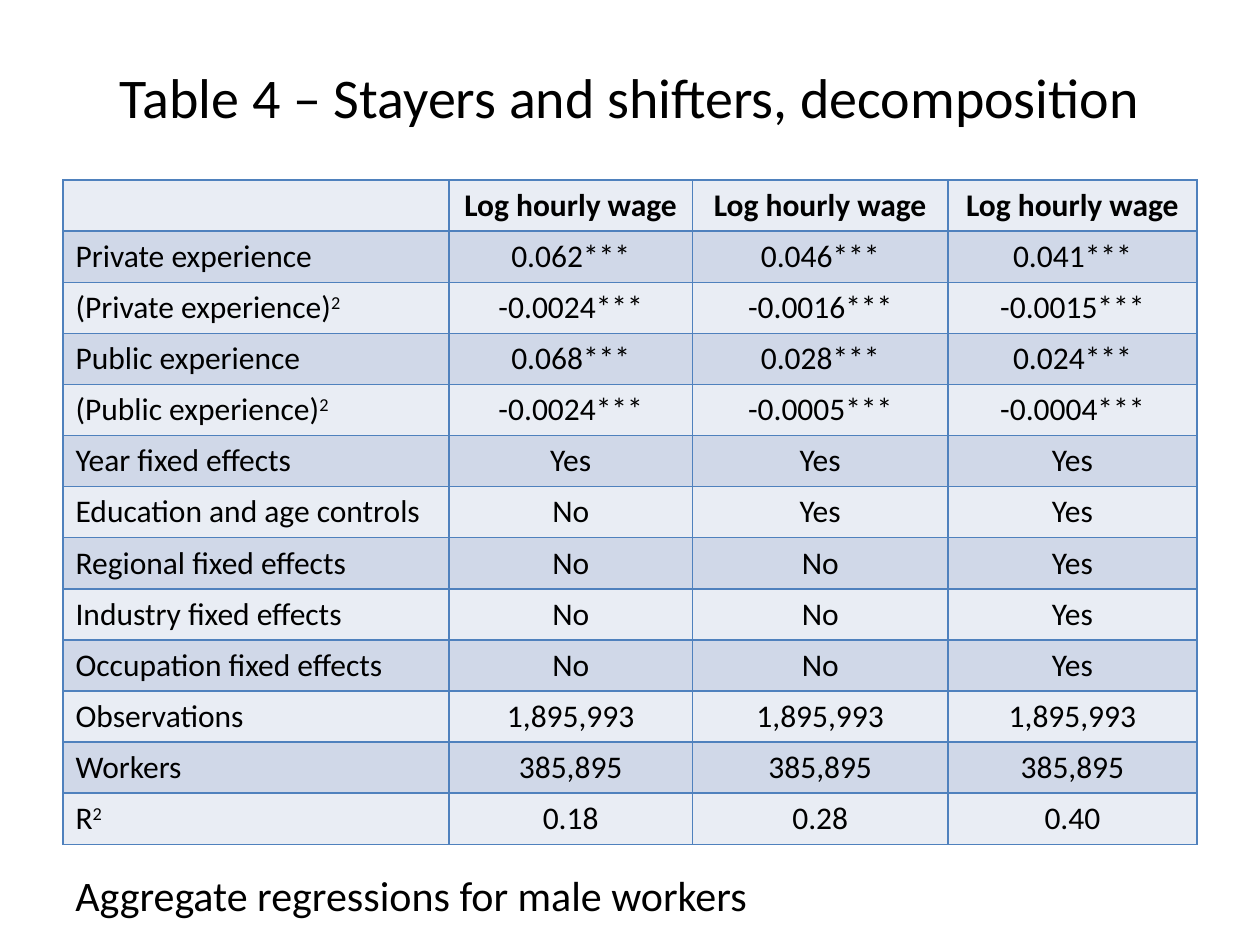
"""Build a slide with a table of wage regressions for stayers and shifters."""
from lxml import etree
from pptx import Presentation
from pptx import util as u
from pptx.dml.color import RGBColor
from pptx.enum import text as t
from pptx.oxml import ns

BLACK = RGBColor(0x00, 0x00, 0x00)
BLUE = RGBColor(0x4F, 0x81, 0xBD)
PALE = RGBColor(0xE9, 0xED, 0xF4)
BAND = RGBColor(0xD0, 0xD8, 0xE8)

WIDTHS = [7.78, 4.91, 5.15, 5.02]
ROWS = [
    [""] + ["Log hourly wage"] * 3,
    ["Private experience", "0.062***", "0.046***", "0.041***"],
    ["(Private experience)^2", "-0.0024***", "-0.0016***", "-0.0015***"],
    ["Public experience", "0.068***", "0.028***", "0.024***"],
    ["(Public experience)^2", "-0.0024***", "-0.0005***", "-0.0004***"],
    ["Year fixed effects", "Yes", "Yes", "Yes"],
    ["Education and age controls", "No", "Yes", "Yes"],
    ["Regional fixed effects", "No", "No", "Yes"],
    ["Industry fixed effects", "No", "No", "Yes"],
    ["Occupation fixed effects", "No", "No", "Yes"],
    ["Observations"] + ["1,895,993"] * 3,
    ["Workers"] + ["385,895"] * 3,
    ["R^2", "0.18", "0.28", "0.40"],
]


class Deck:
    """Holds the text style and the current slide."""

    def __init__(self, font, color):
        self.font, self.color = font, color
        self.prs = Presentation()
        self.prs.slide_width, self.prs.slide_height = u.Cm(25.4), u.Cm(19.05)
        self.slide = self.prs.slides.add_slide(self.prs.slide_layouts[5])

    def label(self, frame, words, size, bold=False, align=t.PP_ALIGN.LEFT):
        """Fill a frame; what follows a caret is raised."""
        para = frame.paragraphs[0]
        para.alignment = align
        para.font.size = u.Pt(size)
        base, _, power = words.partition("^")
        for part in filter(None, (base, power)):
            run = para.add_run()
            run.text = part
            run.font.name, run.font.size = self.font, u.Pt(size)
            run.font.bold, run.font.color.rgb = bold, self.color
        if power:
            run.font._element.set("baseline", "30000")

    def title(self, words, box, size):
        """Place and fill the title placeholder."""
        shape = self.slide.shapes.title
        shape.left, shape.top, shape.width, shape.height = map(u.Cm, box)
        shape.text_frame.vertical_anchor = t.MSO_ANCHOR.MIDDLE
        self.label(shape.text_frame, words, size, align=t.PP_ALIGN.CENTER)

    def note(self, words, box, size):
        """Add a wrapped text box."""
        frame = self.slide.shapes.add_textbox(*map(u.Cm, box)).text_frame
        frame.word_wrap = True
        self.label(frame, words, size)

    def border(self, cell, color):
        """Draw a thin line on all four sides of a cell."""
        props = cell._tc.get_or_add_tcPr()
        for side in "LRTB":
            line = etree.SubElement(props, ns.qn(f"a:ln{side}"), w=str(u.Pt(1)))
            fill = etree.SubElement(line, ns.qn("a:solidFill"))
            etree.SubElement(fill, ns.qn("a:srgbClr"), val=str(color))

    def table(self, rows, widths, left, top, step, size):
        """Add a banded table with a bold first row."""
        box = map(u.Cm, (left, top, sum(widths), step * len(rows)))
        grid = self.slide.shapes.add_table(len(rows), len(widths), *box).table
        for col, width in zip(grid.columns, widths):
            col.width = u.Cm(width)
        for i, row in enumerate(rows):
            grid.rows[i].height = u.Cm(step)
            for j, words in enumerate(row):
                cell = grid.cell(i, j)
                self.border(cell, BLUE)
                cell.fill.solid()
                cell.fill.fore_color.rgb = BAND if i % 2 else PALE
                align = t.PP_ALIGN.CENTER if j else t.PP_ALIGN.LEFT
                self.label(cell.text_frame, words, size, i == 0, align)


def main():
    """Build and save the slide."""
    deck = Deck("Calibri", BLACK)
    deck.title("Table 4 – Stayers and shifters, decomposition",
               (1.27, 0.76, 22.86, 2.36), 32)
    deck.table(ROWS, WIDTHS, 1.27, 3.63, 1.03, 18)
    deck.note("Aggregate regressions for male workers",
              (1.27, 17.4, 22.23, 1.27), 24)
    deck.prs.save("out.pptx")


if __name__ == "__main__":
    main()
